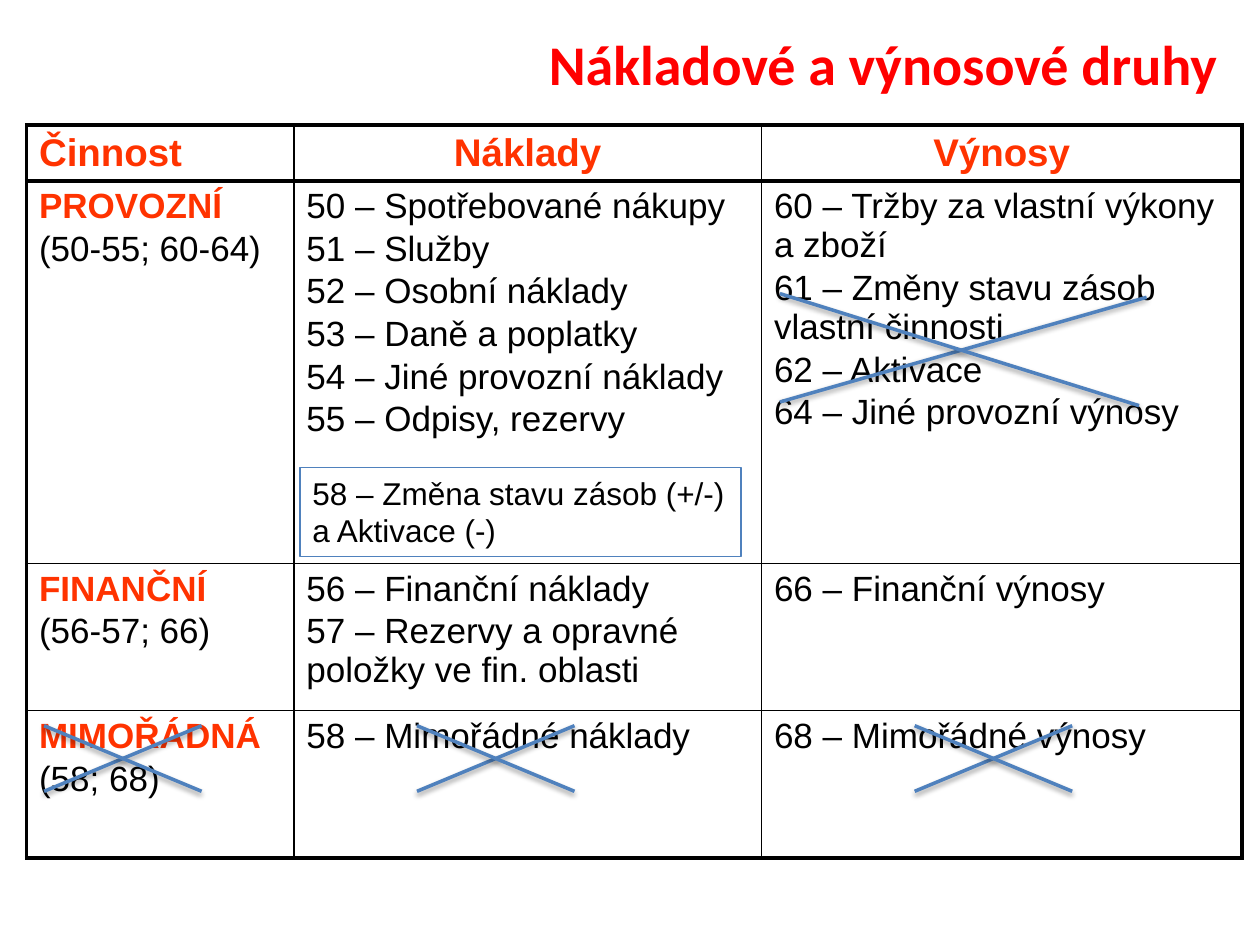
from dataclasses import dataclass

from lxml import etree
from pptx import Presentation
from pptx.dml.color import RGBColor
from pptx.enum.shapes import MSO_CONNECTOR, MSO_SHAPE
from pptx.enum.text import MSO_ANCHOR, MSO_AUTO_SIZE, PP_ALIGN
from pptx.oxml.ns import qn
from pptx.util import Pt

LINE, RECT = MSO_CONNECTOR.STRAIGHT, MSO_SHAPE.RECTANGLE
TOP, MIDDLE = MSO_ANCHOR.TOP, MSO_ANCHOR.MIDDLE
LEFT, CENTER = PP_ALIGN.LEFT, PP_ALIGN.CENTER
GROW = MSO_AUTO_SIZE.SHAPE_TO_FIT_TEXT

COLORS = {"title": "FF0000", "heading": "FF3300", "text": "000000",
          "border": "000000", "accent": "4F81BD"}
THICK, THIN = 2.25, 1


@dataclass
class Activity:
    name: str
    accounts: str
    costs: list[str]
    revenues: list[str]
    height: float


@dataclass
class Cross:
    """Two strokes, each given as x1, y1, x2, y2."""
    rising: tuple[float, float, float, float]
    falling: tuple[float, float, float, float]


HEADER = ["Činnost", "Náklady", "Výnosy"]
HEADER_HEIGHT = 31.8
COL_WIDTHS = [152.8, 267.2, 274.6]
ACTIVITIES = [
    Activity("PROVOZNÍ", "(50-55; 60-64)",
             ["50 – Spotřebované nákupy", "51 – Služby",
              "52 – Osobní náklady", "53 – Daně a poplatky",
              "54 – Jiné provozní náklady", "55 – Odpisy, rezervy"],
             ["60 – Tržby za vlastní výkony a zboží",
              "61 – Změny stavu zásob vlastní činnosti",
              "62 – Aktivace", "64 – Jiné provozní výnosy"], 218.6),
    Activity("FINANČNÍ", "(56-57; 66)",
             ["56 – Finanční náklady",
              "57 – Rezervy a opravné položky ve fin. oblasti"],
             ["66 – Finanční výnosy"], 84.2),
    Activity("MIMOŘÁDNÁ", "(58; 68)", ["58 – Mimořádné náklady"],
             ["68 – Mimořádné výnosy"], 84.2),
]

# Crosses: one per cell of the last row, and a wide one over accounts 61 and 62
CROSS_TOP, CROSS_BOTTOM, CROSS_WIDTH = 414.7, 452.2, 90
CROSSES = [Cross((x, CROSS_BOTTOM, x + CROSS_WIDTH, CROSS_TOP),
                 (x, CROSS_TOP, x + CROSS_WIDTH, CROSS_BOTTOM))
           for x in (25.2, 238.3, 522.7)]
WIDE_CROSS = Cross((445.7, 229.7, 655.2, 169.9), (445.7, 167.8, 650.9, 231.8))


def rgb(name: str) -> RGBColor:
    return RGBColor.from_string(COLORS[name])


def write(tf, text: str, *, size: float = 20, font: str = "Arial",
          color: str = "text", bold: bool = False, align=LEFT,
          before: float = 0, first: bool = True) -> None:
    """Write one paragraph: the first of the frame, or a new one."""
    p = tf.paragraphs[0] if first else tf.add_paragraph()
    p.alignment = align
    p.space_before = Pt(before)
    r = p.add_run()
    r.text = text
    r.font.size, r.font.name, r.font.bold = Pt(size), font, bold
    r.font.color.rgb = rgb(color)


def write_list(tf, lines: list[str], start: int = 0) -> None:
    for i, line in enumerate(lines, start):
        write(tf, line, before=2 if i else 0, first=i == 0)


def set_borders(cell, widths: dict[str, float]) -> None:
    tc_pr = cell._tc.get_or_add_tcPr()
    for i, (side, width) in enumerate(widths.items()):
        ln = etree.Element(qn(f"a:ln{side}"), w=str(Pt(width)))
        fill = etree.SubElement(ln, qn("a:solidFill"))
        etree.SubElement(fill, qn("a:srgbClr"), val=COLORS["border"])
        tc_pr.insert(i, ln)


def draw_table(s) -> None:
    heights = [HEADER_HEIGHT] + [a.height for a in ACTIVITIES]
    n_rows, n_cols = len(heights), len(COL_WIDTHS)
    frame = s.shapes.add_table(n_rows, n_cols, Pt(15.1), Pt(71.5),
                               Pt(sum(COL_WIDTHS)), Pt(sum(heights)))
    table = frame.table
    table.first_row = table.horz_banding = False
    for col, width in zip(table.columns, COL_WIDTHS):
        col.width = Pt(width)
    for row, height in zip(table.rows, heights):
        row.height = Pt(height)

    # Thick outline and header rule, thin inner borders
    for r in range(n_rows):
        for c in range(n_cols):
            cell = table.cell(r, c)
            cell.fill.background()
            cell.vertical_anchor = TOP if r else MIDDLE
            set_borders(cell, {
                "L": THICK if c == 0 else THIN,
                "R": THICK if c == n_cols - 1 else THIN,
                "T": THICK if r <= 1 else THIN,
                "B": THICK if r in (0, n_rows - 1) else THIN})

    # Wording
    for c, text in enumerate(HEADER):
        write(table.cell(0, c).text_frame, text, size=22, color="heading",
              bold=True, align=CENTER if c else LEFT)
    for r, activity in enumerate(ACTIVITIES, 1):
        tf = table.cell(r, 0).text_frame
        write(tf, activity.name, color="heading", bold=True)
        write_list(tf, [activity.accounts], start=1)
        write_list(table.cell(r, 1).text_frame, activity.costs)
        write_list(table.cell(r, 2).text_frame, activity.revenues)


def draw_cross(s, cross: Cross) -> None:
    """The strokes keep the soft shadow of the theme."""
    for stroke in (cross.rising, cross.falling):
        line = s.shapes.add_connector(LINE, *map(Pt, stroke))
        line.line.color.rgb = rgb("accent")
        line.line.width = Pt(2)


def draw_note(s) -> None:
    sp = s.shapes.add_shape(RECT, Pt(171.4), Pt(267.1), Pt(252), Pt(51.1))
    sp.shadow.inherit = False
    sp.fill.background()
    sp.line.color.rgb = rgb("accent")
    sp.line.width = Pt(0.75)
    tf = sp.text_frame
    tf.word_wrap = True
    tf.auto_size = GROW
    tf.vertical_anchor = TOP
    write(tf, "58 – Změna stavu zásob (+/-) a Aktivace (-)", size=18)


def main() -> None:
    prs = Presentation()
    prs.slide_width, prs.slide_height = Pt(720), Pt(540)
    s = prs.slides.add_slide(prs.slide_layouts[5])

    # Title
    title = s.shapes.title
    title.left, title.top = Pt(218.2), Pt(1.4)
    title.width, title.height = Pt(573.1), Pt(69.8)
    title.text_frame.vertical_anchor = MIDDLE
    write(title.text_frame, "Nákladové a výnosové druhy", size=32,
          font="Calibri", color="title", bold=True, align=CENTER)

    # Table, then the marks above it
    draw_table(s)
    for cross in CROSSES:
        draw_cross(s, cross)
    draw_note(s)
    draw_cross(s, WIDE_CROSS)

    prs.save("out.pptx")


if __name__ == "__main__":
    main()
